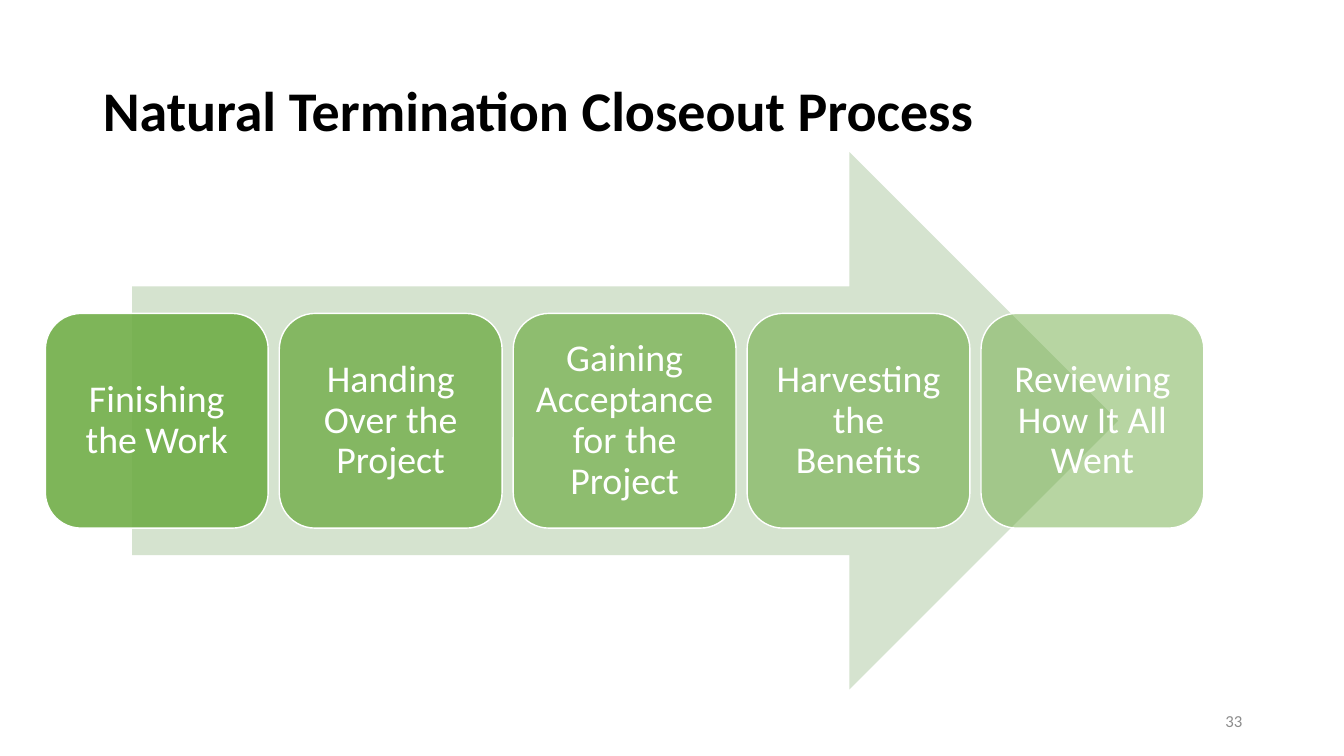
from dataclasses import dataclass

from lxml import etree
from pptx import Presentation
from pptx import util as u
from pptx.dml.color import RGBColor
from pptx.enum import shapes, text
from pptx.oxml.ns import qn

EMU_PER_PX = 9144
STEPS = [
    "Finishing the Work",
    "Handing Over the Project",
    "Gaining Acceptance for the Project",
    "Harvesting the Benefits",
    "Reviewing How It All Went",
]


@dataclass(frozen=True)
class Theme:
    font: str = "Calibri"
    title_color: str = "000000"
    arrow_color: str = "D5E3CF"
    step_color: str = "70AD47"
    step_text_color: str = "FFFFFF"
    number_color: str = "8C8C8C"
    title_size: int = 40
    step_size: int = 27
    number_size: int = 12


def px(value):
    return u.Emu(value * EMU_PER_PX)


class SlideBuilder:
    def __init__(self, slide, theme):
        self.slide = slide
        self.theme = theme

    def set_text(self, shape, wording, size, color, align, bold=False, spacing=1.0):
        frame = shape.text_frame
        frame.text = wording
        frame.word_wrap = True
        frame.auto_size = text.MSO_AUTO_SIZE.NONE
        frame.vertical_anchor = text.MSO_ANCHOR.MIDDLE
        paragraph = frame.paragraphs[0]
        paragraph.alignment = align
        paragraph.line_spacing = spacing
        font = paragraph.font
        font.name = self.theme.font
        font.size = u.Pt(size)
        font.bold = bold
        font.color.rgb = RGBColor.from_string(color)

    def title(self, wording, left, top, width, height):
        shape = self.slide.shapes.title
        shape.left, shape.top = px(left), px(top)
        shape.width, shape.height = px(width), px(height)
        self.set_text(shape, wording, self.theme.title_size, self.theme.title_color,
                      text.PP_ALIGN.LEFT, bold=True, spacing=0.9)

    def filled_shape(self, kind, color, left, top, width, height):
        shape = self.slide.shapes.add_shape(
            kind, px(left), px(top), px(width), px(height))
        shape.shadow.inherit = False
        shape.fill.solid()
        shape.fill.fore_color.rgb = RGBColor.from_string(color)
        shape.line.fill.background()
        return shape

    def arrow(self, left, top, width, height):
        self.filled_shape(shapes.MSO_SHAPE.RIGHT_ARROW, self.theme.arrow_color,
                          left, top, width, height)

    def step(self, wording, opacity, left, top, width, height):
        theme = self.theme
        shape = self.filled_shape(shapes.MSO_SHAPE.ROUNDED_RECTANGLE,
                                  theme.step_color, left, top, width, height)
        fill_color = shape.element.spPr.find(qn("a:solidFill"))[0]
        etree.SubElement(fill_color, qn("a:alpha"), val=str(opacity * 1000))
        shape.line.color.rgb = RGBColor.from_string(theme.step_text_color)
        shape.line.width = u.Pt(1)
        frame = shape.text_frame
        frame.margin_left = frame.margin_right = px(11)
        frame.margin_top = frame.margin_bottom = px(11)
        self.set_text(shape, wording, theme.step_size, theme.step_text_color,
                      text.PP_ALIGN.CENTER, spacing=0.9)

    def page_number(self, wording, left, top, width, height):
        shape = self.slide.shapes.add_textbox(
            px(left), px(top), px(width), px(height))
        self.set_text(shape, wording, self.theme.number_size,
                      self.theme.number_color, text.PP_ALIGN.RIGHT)


def main():
    presentation = Presentation()
    presentation.slide_width = px(1333)
    presentation.slide_height = px(750)
    slide = presentation.slides.add_slide(presentation.slide_layouts[5])
    builder = SlideBuilder(slide, Theme())

    builder.title("Natural Termination Closeout Process", 92, 40, 1150, 145)
    builder.arrow(131, 151, 978, 533)
    for index, wording in enumerate(STEPS):
        builder.step(wording, 90 - 10 * index, 45 + 232 * index, 311, 221, 213)
    builder.page_number("33", 942, 695, 300, 40)

    presentation.save("out.pptx")


if __name__ == "__main__":
    main()
